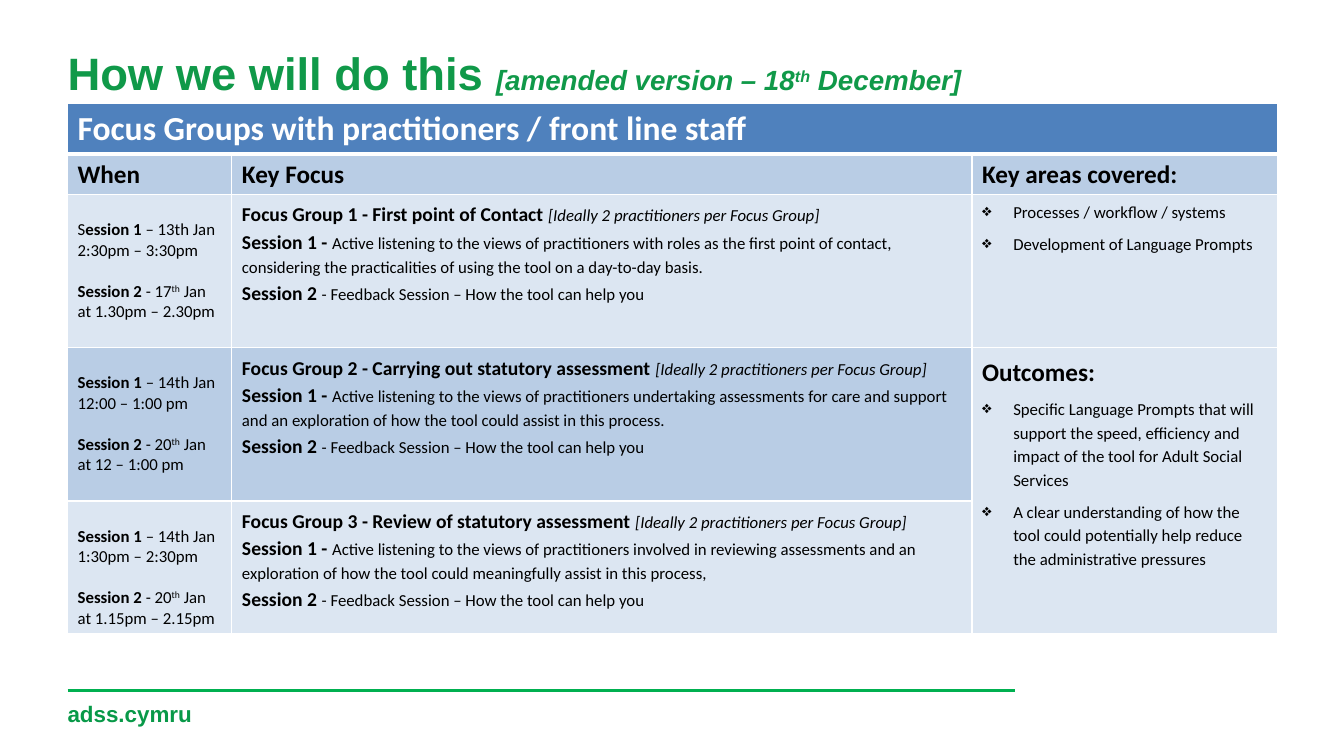
from dataclasses import dataclass

from lxml.etree import SubElement
from pptx import Presentation
from pptx.dml.color import RGBColor as RGB
from pptx.enum.shapes import MSO_CONNECTOR as Connector
from pptx.oxml.ns import qn
from pptx.util import Inches, Pt


@dataclass(frozen=True)
class Theme:
    heading_font: str = "Arial"
    body_font: str = "Calibri"
    title: str = "109949"
    footer: str = "089948"
    rule: str = "00B050"
    banner: str = "4F81BD"
    dark_band: str = "B9CDE5"
    light_band: str = "DCE6F2"
    white: str = "FFFFFF"
    black: str = "000000"
    title_size: float = 32.4
    version_size: float = 19.8
    footer_size: float = 16
    banner_size: float = 24
    header_size: float = 18
    label_size: float = 14
    body_size: float = 12


theme = Theme()


def write(paragraph, pieces, color=theme.black, font=theme.body_font):
    for text, size, style in pieces:
        run = paragraph.add_run()
        run.text = text
        run.font.name = font
        run.font.size = Pt(size)
        run.font.bold = "b" in style
        run.font.italic = "i" in style
        run.font.color.rgb = RGB.from_string(color)
        if "^" in style:
            run.font._element.set("baseline", "30000")


def write_bullet(paragraph, text):
    properties = paragraph._p.get_or_add_pPr()
    properties.set("marL", str(Inches(0.31)))
    properties.set("indent", str(-Inches(0.31)))
    SubElement(properties, qn("a:buChar"), char="❖")
    paragraph.line_spacing = 1.15
    paragraph.space_after = Pt(6)
    write(paragraph, [(text, theme.body_size, "")])


prs = Presentation()
prs.slide_width, prs.slide_height = Inches(13.33), Inches(7.5)
slide = prs.slides.add_slide(prs.slide_layouts[6])

footer_rule = slide.shapes.add_connector(
    Connector.STRAIGHT, Inches(0.67), Inches(6.85), Inches(10.07), Inches(6.85))
footer_rule.line.color.rgb = RGB.from_string(theme.rule)
footer_rule.line.width = Pt(1.75)
SubElement(footer_rule._element.spPr, qn("a:effectLst"))

title_pieces = [
    ("How we will do this ", theme.title_size, "b"),
    ("[amended version – 18", theme.version_size, "bi"),
    ("th", theme.version_size, "bi^"),
    (" December]", theme.version_size, "bi"),
]
footer_pieces = [("adss.cymru", theme.footer_size, "b")]
for top, width, height, pieces, color in (
    (0.45, 12, 0.7, title_pieces, theme.title),
    (6.95, 3.11, 0.4, footer_pieces, theme.footer),
):
    frame = slide.shapes.add_textbox(
        Inches(0.67), Inches(top), Inches(width), Inches(height)).text_frame
    frame.word_wrap = True
    frame.margin_left = frame.margin_right = frame.margin_top = frame.margin_bottom = 0
    write(frame.paragraphs[0], pieces, color, theme.heading_font)

column_widths = [1.63, 7.34, 3.03]
row_heights = [0.5, 0.4, 1.52, 1.52, 1.32]
schedule = slide.shapes.add_table(
    5, 3, Inches(0.67), Inches(1.03), Inches(12), Inches(sum(row_heights))).table
schedule.first_row = schedule.horz_banding = False
for column, width in zip(schedule.columns, column_widths):
    column.width = Inches(width)
for row, height in zip(schedule.rows, row_heights):
    row.height = Inches(height)

row_fills = [theme.banner, theme.dark_band, theme.light_band, theme.dark_band, theme.light_band]
for r, row in enumerate(schedule.rows):
    for c, cell in enumerate(row.cells):
        properties = cell._tc.get_or_add_tcPr()
        for side in "LRTB":
            heavy = (r, side) in ((0, "B"), (1, "T"))
            border = SubElement(properties, qn(f"a:ln{side}"), w=str(Pt(3 if heavy else 1)))
            SubElement(SubElement(border, qn("a:solidFill")), qn("a:srgbClr"), val=theme.white)
        cell.fill.solid()
        fill = theme.light_band if c == 2 and r > 1 else row_fills[r]
        cell.fill.fore_color.rgb = RGB.from_string(fill)

schedule.cell(0, 0).merge(schedule.cell(0, 2))
schedule.cell(3, 2).merge(schedule.cell(4, 2))

write(schedule.cell(0, 0).text_frame.paragraphs[0],
      [("Focus Groups with practitioners / front line staff", theme.banner_size, "b")], theme.white)
for c, header in enumerate(("When", "Key Focus", "Key areas covered:")):
    write(schedule.cell(1, c).text_frame.paragraphs[0], [(header, theme.header_size, "b")])

focus_groups = [
    ("First point of Contact", "13th Jan 2:30pm – 3:30pm", "17", "1.30pm – 2.30pm",
     "Active listening to the views of practitioners with roles as the first point of contact, "
     "considering the practicalities of using the tool on a day-to-day basis."),
    ("Carrying out statutory assessment", "14th Jan 12:00 – 1:00 pm", "20", "12 – 1:00 pm",
     "Active listening to the views of practitioners undertaking assessments for care and support "
     "and an exploration of how the tool could assist in this process."),
    ("Review of statutory assessment", "14th Jan 1:30pm – 2:30pm", "20", "1.15pm – 2.15pm",
     "Active listening to the views of practitioners involved in reviewing assessments and an "
     "exploration of how the tool could meaningfully assist in this process,"),
]
body, label = theme.body_size, theme.label_size
for number, (topic, first_slot, second_day, second_time, activity) in enumerate(focus_groups, 1):
    when, focus = (schedule.cell(number + 1, c) for c in (0, 1))
    when.margin_top = Inches(0.25)
    first_session = when.text_frame.paragraphs[0]
    initial_style = "" if number == 1 else "b"
    write(first_session, [("S", body, initial_style), ("ession 1 ", body, "b"),
                          (f"– {first_slot}", body, "")])
    second_session = when.text_frame.add_paragraph()
    second_session.space_before = Pt(14.6)
    write(second_session, [("Session 2 ", body, "b"), (f"- {second_day}", body, ""),
                           ("th", body, "^"), (f" Jan at {second_time}", body, "")])

    focus_lines = [
        [(f"Focus Group {number} - {topic} ", label, "b"),
         ("[Ideally 2 practitioners per Focus Group]", body, "i")],
        [("Session 1 - ", label, "b"), (activity, body, "")],
        [("Session 2 ", label, "b"), ("- Feedback Session – How the tool can help you", body, "")],
    ]
    for i, pieces in enumerate(focus_lines):
        line = focus.text_frame.add_paragraph() if i else focus.text_frame.paragraphs[0]
        line.line_spacing = 1.15
        write(line, pieces)

areas = schedule.cell(2, 2).text_frame
write_bullet(areas.paragraphs[0], "Processes / workflow / systems")
write_bullet(areas.add_paragraph(), "Development of Language Prompts")

outcomes = schedule.cell(3, 2).text_frame
outcomes_heading = outcomes.paragraphs[0]
outcomes_heading.line_spacing = 1.15
outcomes_heading.space_after = Pt(6)
write(outcomes_heading, [("Outcomes:", theme.header_size, "b")])
for outcome in (
    "Specific Language Prompts that will support the speed, efficiency and impact of the tool "
    "for Adult Social Services",
    "A clear understanding of how the tool could potentially help reduce the "
    "administrative pressures",
):
    write_bullet(outcomes.add_paragraph(), outcome)

prs.save("out.pptx")
